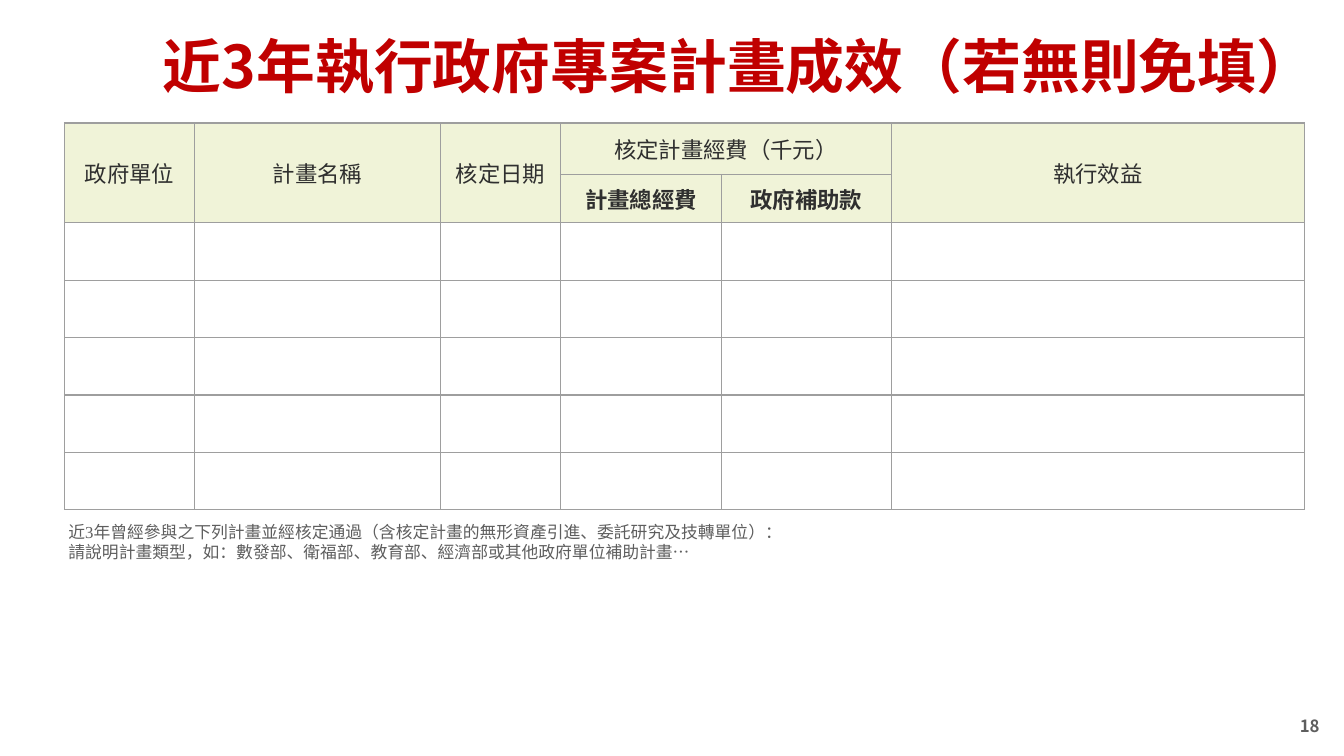
from lxml import etree
from pptx import Presentation
from pptx import util as u
from pptx.dml import color
from pptx.enum import text
from pptx.oxml import ns

SANS = "Noto Sans CJK SC"
SERIF = "Times New Roman"
GREY = "5E5E5E"
COLUMN_WIDTHS = [1.29, 2.44, 1.19, 1.6, 1.68, 4.1]
ROW_HEIGHTS = [0.51, 0.48] + [0.57] * 5
HEADER_ROWS = 2
HEADINGS = [
    (0, 0, 1, 0, "政府單位", False),
    (0, 1, 1, 1, "計畫名稱", False),
    (0, 2, 1, 2, "核定日期", False),
    (0, 3, 0, 4, "核定計畫經費（千元）", False),
    (0, 5, 1, 5, "執行效益", False),
    (1, 3, 1, 3, "計畫總經費", True),
    (1, 4, 1, 4, "政府補助款", True),
]


def rgb(value):
    return color.RGBColor.from_string(value)


def style_text(frame, size, font, ink, bold=False, align=text.PP_ALIGN.CENTER):
    for paragraph in frame.paragraphs:
        paragraph.alignment = align
        for run in paragraph.runs:
            run.font.size = u.Pt(size)
            run.font.bold = bold
            run.font.color.rgb = rgb(ink)
            run.font.name = font
            etree.SubElement(run.font._element, ns.qn("a:ea"), typeface=SANS)


def add_text(slide, box, words, anchor, inset=None, wrap=True):
    frame = slide.shapes.add_textbox(*map(u.Inches, box)).text_frame
    frame.word_wrap = wrap
    frame.vertical_anchor = anchor
    if inset is not None:
        frame.margin_left = frame.margin_right = u.Inches(inset)
        frame.margin_top = frame.margin_bottom = u.Inches(inset)
    frame.text = words
    return frame


def add_title(slide, box):
    title = add_text(slide, box, "近3年執行政府專案計畫成效（若無則免填）",
                     text.MSO_ANCHOR.MIDDLE, 0.06)
    style_text(title, 42, SANS, "C00000", True)


def add_page_number(slide, box):
    number = add_text(slide, box, "18", text.MSO_ANCHOR.BOTTOM, 0.06, False)
    style_text(number, 12, SANS, GREY, True)


def add_note(slide, box):
    note = add_text(
        slide, box,
        "近3年曾經參與之下列計畫並經核定通過（含核定計畫的無形資產引進、委託研究及技轉單位）：\n"
        "請說明計畫類型，如：數發部、衛福部、教育部、經濟部或其他政府單位補助計畫…",
        text.MSO_ANCHOR.TOP)
    style_text(note, 12, SERIF, GREY, align=text.PP_ALIGN.LEFT)


def add_borders(cell, ink, width):
    properties = cell._tc.get_or_add_tcPr()
    for side in ("lnL", "lnR", "lnT", "lnB"):
        border = etree.SubElement(properties, ns.qn(f"a:{side}"), w=str(u.Pt(width)))
        fill = etree.SubElement(border, ns.qn("a:solidFill"))
        etree.SubElement(fill, ns.qn("a:srgbClr"), val=ink)


def add_project_table(slide, box):
    projects = slide.shapes.add_table(
        len(ROW_HEIGHTS), len(COLUMN_WIDTHS), *map(u.Inches, box)).table
    for column, width in zip(projects.columns, COLUMN_WIDTHS):
        column.width = u.Inches(width)
    for index, (row, height) in enumerate(zip(projects.rows, ROW_HEIGHTS)):
        row.height = u.Inches(height)
        for cell in row.cells:
            add_borders(cell, "9E9E9E", 1)
            cell.fill.solid()
            cell.fill.fore_color.rgb = rgb("F0F3D8" if index < HEADER_ROWS else "FFFFFF")
    for top, left, bottom, right, words, bold in HEADINGS:
        heading = projects.cell(top, left)
        if (top, left) != (bottom, right):
            heading.merge(projects.cell(bottom, right))
        heading.text_frame.text = words
        heading.vertical_anchor = text.MSO_ANCHOR.MIDDLE
        style_text(heading.text_frame, 16, SERIF, "2F2F2F", bold)


def main():
    deck = Presentation()
    deck.slide_width, deck.slide_height = u.Inches(13.33), u.Inches(7.5)
    slide = deck.slides.add_slide(deck.slide_layouts[6])
    add_title(slide, (1.19, 0.25, 12.28, 0.79))
    add_page_number(slide, (12.83, 7.05, 0.32, 0.31))
    add_project_table(slide, (0.64, 1.22, sum(COLUMN_WIDTHS), sum(ROW_HEIGHTS)))
    add_note(slide, (0.58, 5.13, 12.19, 0.5))
    deck.save("out.pptx")


if __name__ == "__main__":
    main()
